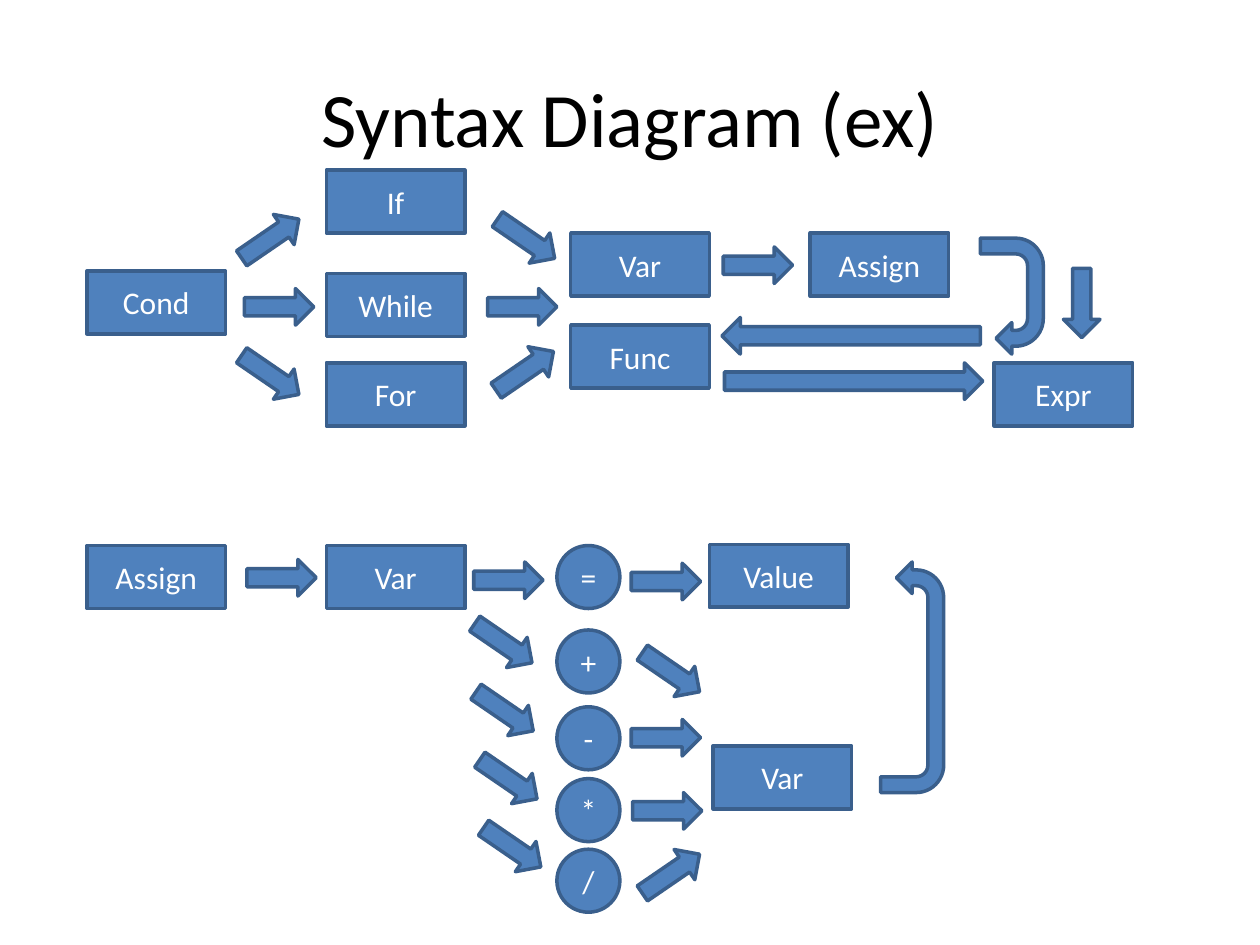
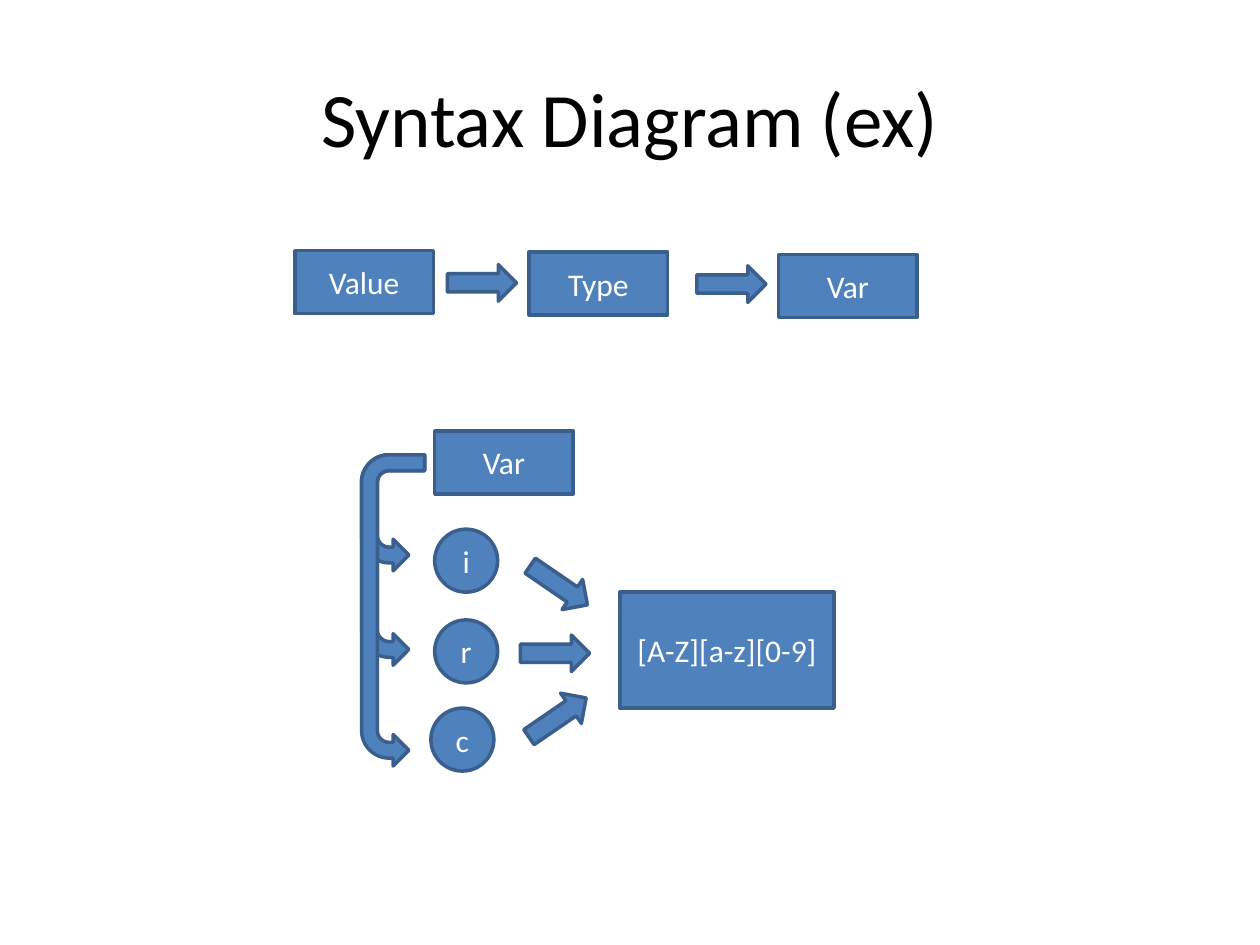
"""Build two slides of syntax diagrams made of boxes, circles and block arrows."""
from dataclasses import dataclass

from pptx import Presentation
from pptx.dml.color import RGBColor
from pptx.enum.shapes import MSO_SHAPE
from pptx.enum.text import MSO_ANCHOR, PP_ALIGN
from pptx.oxml.ns import qn
from pptx.util import Inches, Pt

BOX = MSO_SHAPE.RECTANGLE
CIRCLE = MSO_SHAPE.FLOWCHART_CONNECTOR
STRAIGHT_ARROW = MSO_SHAPE.RIGHT_ARROW
U_TURN_ARROW = MSO_SHAPE.U_TURN_ARROW
CENTER = PP_ALIGN.CENTER
MIDDLE = MSO_ANCHOR.MIDDLE

FILL = RGBColor(0x4F, 0x81, 0xBD)
OUTLINE = RGBColor(0x3A, 0x5F, 0x8C)
BLACK = RGBColor(0x00, 0x00, 0x00)
WHITE = RGBColor(0xFF, 0xFF, 0xFF)
FONT = "Calibri"
TITLE = "Syntax Diagram (ex)"
TITLE_ONLY_LAYOUT = 5

ARROW_HEIGHT = 0.29
U_TURN_WIDTH = 0.5
RISING = 325.6
FALLING = 34.4
DOWN = 90
BACK = 180


@dataclass(frozen=True)
class Box:
    text: str
    left: float
    top: float
    width: float = 1.1
    height: float = 0.5


@dataclass(frozen=True)
class Circle:
    text: str
    left: float
    top: float
    size: float = 0.5


@dataclass(frozen=True)
class Arrow:
    left: float
    top: float
    rotation: float = 0
    length: float = 0.55


@dataclass(frozen=True)
class UTurn:
    left: float
    top: float
    drop: float
    rotation: float
    mirrored: bool = False


@dataclass(frozen=True)
class Diagram:
    boxes: list[Box]
    circles: list[Circle]
    arrows: list[Arrow]
    u_turns: list[UTurn]


FIRST_COLUMN, SECOND_COLUMN, THIRD_COLUMN = 0.69, 2.59, 4.53
OPERATOR_COLUMN = 4.42

STATEMENTS = Diagram(
    boxes=[
        Box("Cond", FIRST_COLUMN, 2.15),
        Box("If", SECOND_COLUMN, 1.35),
        Box("While", SECOND_COLUMN, 2.17),
        Box("For", SECOND_COLUMN, 2.88),
        Box("Var", THIRD_COLUMN, 1.85),
        Box("Func", THIRD_COLUMN, 2.58),
        Box("Assign", 6.43, 1.85),
        Box("Expr", 7.89, 2.88),
        Box("Assign", FIRST_COLUMN, 4.33),
        Box("Var", SECOND_COLUMN, 4.33),
        Box("Value", 5.63, 4.32),
        Box("Var", 5.66, 5.92),
    ],
    circles=[
        Circle(operator, OPERATOR_COLUMN, top)
        for operator, top in zip("=+-*/", (4.33, 5, 5.61, 6.18, 6.74))
    ],
    arrows=[
        Arrow(1.87, 1.75, RISING),
        Arrow(1.94, 2.29),
        Arrow(1.87, 2.83, FALLING),
        Arrow(3.9, 1.75, FALLING),
        Arrow(3.87, 2.29),
        Arrow(3.89, 2.8, RISING),
        Arrow(5.74, 1.96),
        Arrow(5.73, 2.52, BACK, 2.05),
        Arrow(5.75, 2.88, length=2.05),
        Arrow(8.31, 2.26, DOWN),
        Arrow(1.96, 4.44),
        Arrow(3.76, 4.46),
        Arrow(5.01, 4.47),
        *(Arrow(left, 4.96 + 0.54 * row, FALLING)
          for row, left in enumerate((3.72, 3.73, 3.76, 3.79))),
        Arrow(5.05, 5.19, FALLING),
        Arrow(5.01, 5.71),
        Arrow(5.02, 6.29),
        Arrow(5.05, 6.79, RISING),
    ],
    u_turns=[
        UTurn(7.78, 1.89, 0.92, 90),
        UTurn(6.99, 4.46, 1.83, 90, mirrored=True),
    ],
)

VALUES = Diagram(
    boxes=[
        Box("Value", 2.34, 1.99),
        Box("Type", 4.2, 2),
        Box("Var", 6.18, 2.02),
        Box("Var", 3.45, 3.42),
        Box("[A-Z][a-z][0-9]", 4.92, 4.7, 1.7, 0.92),
    ],
    circles=[
        Circle("i", 3.45, 4.2),
        Circle("r", 3.45, 4.92),
        Circle("c", 3.42, 5.62),
    ],
    arrows=[
        Arrow(3.55, 2.1),
        Arrow(5.53, 2.11),
        Arrow(4.16, 4.5, FALLING),
        Arrow(4.13, 5.04),
        Arrow(4.15, 5.55, RISING),
    ],
    u_turns=[
        UTurn(2.87, 3.61, drop, 270, mirrored=True)
        for drop in (0.92, 1.67, 2.47)
    ],
)


def add_block(slide, kind, left: float, top: float, width: float, height: float):
    """Add a preset shape in the shared fill and outline."""
    shape = slide.shapes.add_shape(
        kind, Inches(left), Inches(top), Inches(width), Inches(height)
    )
    shape.shadow.inherit = False
    shape.fill.solid()
    shape.fill.fore_color.rgb = FILL
    shape.line.color.rgb = OUTLINE
    shape.line.width = Pt(2)
    return shape


def set_text(shape, text: str, size: int, color: RGBColor) -> None:
    """Write one centred paragraph into a shape."""
    text_frame = shape.text_frame
    text_frame.text = text
    text_frame.word_wrap = True
    text_frame.vertical_anchor = MIDDLE
    paragraph = text_frame.paragraphs[0]
    paragraph.alignment = CENTER
    font = paragraph.runs[0].font
    font.name = FONT
    font.size = Pt(size)
    font.color.rgb = color


def draw_box(slide, box: Box) -> None:
    """Draw a labelled rectangle."""
    shape = add_block(slide, BOX, box.left, box.top, box.width, box.height)
    set_text(shape, box.text, 18, WHITE)


def draw_circle(slide, circle: Circle) -> None:
    """Draw a labelled circle."""
    shape = add_block(slide, CIRCLE, circle.left, circle.top, circle.size, circle.size)
    set_text(shape, circle.text, 18, WHITE)


def draw_arrow(slide, arrow: Arrow) -> None:
    """Draw a straight block arrow turned about its centre."""
    shape = add_block(
        slide, STRAIGHT_ARROW, arrow.left, arrow.top, arrow.length, ARROW_HEIGHT
    )
    shape.rotation = arrow.rotation


def draw_u_turn(slide, turn: UTurn) -> None:
    """Draw an upright U-turn arrow whose visible corner is left, top."""
    shift = (turn.drop - U_TURN_WIDTH) / 2
    shape = add_block(
        slide, U_TURN_ARROW, turn.left - shift, turn.top + shift, turn.drop, U_TURN_WIDTH
    )
    shape.rotation = turn.rotation
    if turn.mirrored:
        shape.element.spPr.find(qn("a:xfrm")).set("flipH", "1")


def add_diagram_slide(presentation, diagram: Diagram) -> None:
    """Add a titled slide and draw its diagram."""
    slide = presentation.slides.add_slide(presentation.slide_layouts[TITLE_ONLY_LAYOUT])
    title = slide.shapes.title
    title.left, title.top = Inches(0.5), Inches(0.3)
    title.width, title.height = Inches(9), Inches(1.25)
    set_text(title, TITLE, 44, BLACK)
    for turn in diagram.u_turns:
        draw_u_turn(slide, turn)
    for box in diagram.boxes:
        draw_box(slide, box)
    for circle in diagram.circles:
        draw_circle(slide, circle)
    for arrow in diagram.arrows:
        draw_arrow(slide, arrow)


def main() -> None:
    """Build and save the presentation."""
    presentation = Presentation()
    presentation.slide_width = Inches(10)
    presentation.slide_height = Inches(7.5)
    for diagram in (STATEMENTS, VALUES):
        add_diagram_slide(presentation, diagram)
    presentation.save("out.pptx")


if __name__ == "__main__":
    main()
